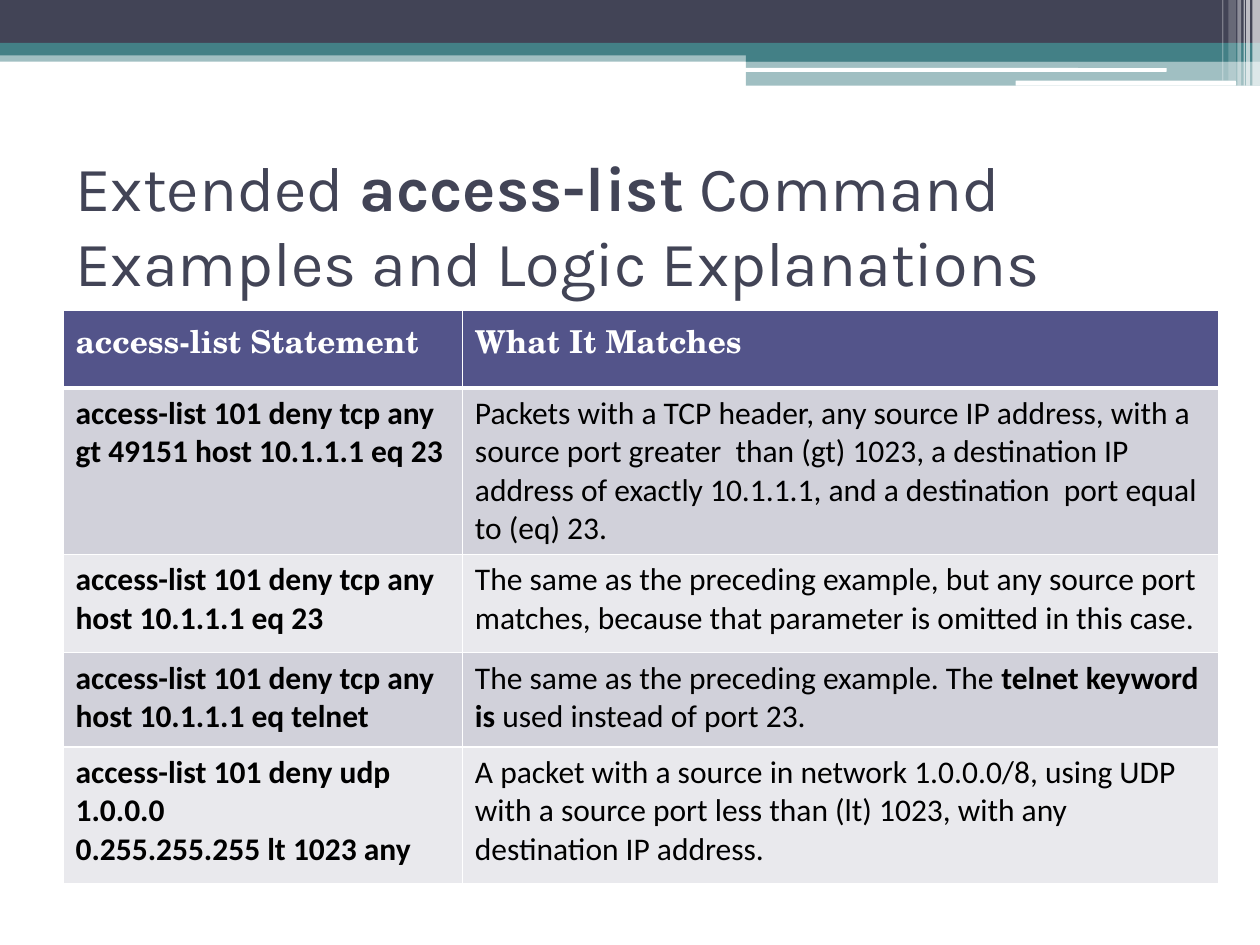
from dataclasses import dataclass

from lxml.etree import SubElement
from pptx import Presentation
from pptx.dml.color import RGBColor
from pptx.enum.shapes import MSO_SHAPE
from pptx.enum.text import MSO_ANCHOR, MSO_AUTO_SIZE, PP_ALIGN
from pptx.oxml.ns import qn
from pptx.util import Inches, Pt

SLATE = RGBColor(0x42, 0x44, 0x56)
TEAL = RGBColor(0x43, 0x80, 0x86)
INDIGO = RGBColor(0x53, 0x54, 0x8A)
BAND_DARK = RGBColor(0xD1, 0xD1, 0xDA)
BAND_LIGHT = RGBColor(0xE9, 0xE9, 0xED)
WHITE = RGBColor(0xFF, 0xFF, 0xFF)
BLACK = RGBColor(0, 0, 0)


@dataclass
class Bar:
    left: float
    top: float
    width: float
    height: float
    color: RGBColor
    opacity: int = 100
    rounded: bool = False


@dataclass
class Example:
    statement: list[str]
    meaning: list[str]  # ordinary and bold pieces alternate
    height: float


BANNER = [
    Bar(0, 0.4, 10, 0.09, TEAL, 50),
    Bar(0, 0, 10, 0.34, SLATE),
    Bar(0, 0.34, 10, 0.1, TEAL),
    Bar(5.92, 0.39, 4.08, 0.1, TEAL),
    Bar(5.92, 0.48, 4.08, 0.2, TEAL, 50),
    Bar(5.91, 0.54, 3.35, 0.03, WHITE, rounded=True),
    Bar(8.06, 0.64, 1.75, 0.04, WHITE, rounded=True),
    # Fading stripes at the right edge
    Bar(9.94, 0, 0.06, 0.68, WHITE, 65),
    Bar(9.89, 0, 0.03, 0.68, WHITE, 65),
    Bar(9.87, 0, 0.01, 0.68, WHITE, 60),
    Bar(9.82, 0, 0.03, 0.68, WHITE, 40),
    Bar(9.75, 0, 0.06, 0.64, WHITE, 20),
    Bar(9.7, 0, 0.01, 0.64, WHITE, 30),
]

HEADINGS = ["access-list Statement", "What It Matches"]
COLUMN_WIDTHS = [3.17, 6]
HEADER_HEIGHT = 0.62
EXAMPLES = [
    Example(
        ["access-list 101 deny tcp any gt 49151 host 10.1.1.1 eq 23"],
        ["Packets with a TCP header, any source IP address, with a source port "
         "greater  than (gt) 1023, a destination IP address of exactly 10.1.1.1, "
         "and a destination  port equal to (eq) 23."],
        1.08,
    ),
    Example(
        ["access-list 101 deny tcp any host 10.1.1.1 eq 23"],
        ["The same as the preceding example, but any source port matches, "
         "because that parameter is omitted in this case."],
        0.78,
    ),
    Example(
        ["access-list 101 deny tcp any", "host 10.1.1.1 eq telnet"],
        ["The same as the preceding example. The ", "telnet keyword is ",
         "used instead of port 23."],
        0.75,
    ),
    Example(
        ["access-list 101 deny udp 1.0.0.0", "0.255.255.255 lt 1023 any"],
        ["A packet with a source in network 1.0.0.0/8, using UDP with a source "
         "port less than (lt) 1023, with any destination IP address."],
        1.08,
    ),
]


def add_text(paragraph, text: str, *, font: str = "Calibri", size: float = 18,
             color: RGBColor = BLACK, bold: bool = False) -> None:
    run = paragraph.add_run()
    run.text = text
    run.font.name = font
    run.font.size = Pt(size)
    run.font.color.rgb = color
    run.font.bold = bold


def add_alternating(paragraph, pieces: list[str], **style) -> None:
    for index, piece in enumerate(pieces):
        add_text(paragraph, piece, bold=index % 2 == 1, **style)


def draw_bar(slide, bar: Bar) -> None:
    preset = MSO_SHAPE.ROUNDED_RECTANGLE if bar.rounded else MSO_SHAPE.RECTANGLE
    shape = slide.shapes.add_shape(preset, Inches(bar.left), Inches(bar.top),
                                   Inches(bar.width), Inches(bar.height))
    shape.shadow.inherit = False
    shape.line.fill.background()
    shape.fill.solid()
    shape.fill.fore_color.rgb = bar.color
    if bar.opacity < 100:
        color = shape.fill._xPr.find(qn("a:solidFill"))[0]
        SubElement(color, qn("a:alpha")).set("val", str(bar.opacity * 1000))


def style_cell(cell, fill: RGBColor, bottom_width: float = 1) -> None:
    properties = cell._tc.get_or_add_tcPr()
    widths = {"a:lnL": 1, "a:lnR": 1, "a:lnT": 1, "a:lnB": bottom_width}
    for tag, width in widths.items():
        border = SubElement(properties, qn(tag), w=str(Pt(width)))
        solid = SubElement(border, qn("a:solidFill"))
        SubElement(solid, qn("a:srgbClr"), val=str(WHITE))
    cell.fill.solid()
    cell.fill.fore_color.rgb = fill


def draw_title(slide) -> None:
    title = slide.shapes.title
    title.left, title.top = Inches(0.5), Inches(1.19)
    title.width, title.height = Inches(9), Inches(1.17)
    frame = title.text_frame
    frame.word_wrap = True
    frame.auto_size = MSO_AUTO_SIZE.NONE
    frame.vertical_anchor = MSO_ANCHOR.MIDDLE
    paragraph = frame.paragraphs[0]
    paragraph.alignment = PP_ALIGN.LEFT
    add_alternating(
        paragraph,
        ["Extended ", "access-list", " Command Examples and Logic Explanations"],
        font="Karla", size=36, color=SLATE)


def draw_examples(slide) -> None:
    heights = [HEADER_HEIGHT] + [example.height for example in EXAMPLES]
    table = slide.shapes.add_table(
        len(heights), len(COLUMN_WIDTHS), Inches(0.5), Inches(2.46),
        Inches(sum(COLUMN_WIDTHS)), Inches(sum(heights))).table
    for column, width in zip(table.columns, COLUMN_WIDTHS):
        column.width = Inches(width)
    for row, height in zip(table.rows, heights):
        row.height = Inches(height)

    # Header row
    for column, heading in enumerate(HEADINGS):
        cell = table.cell(0, column)
        style_cell(cell, INDIGO, bottom_width=3)
        add_text(cell.text_frame.paragraphs[0], heading,
                 font="TeX Gyre Schola", color=WHITE, bold=True)

    # Example rows in alternating bands
    for row, example in enumerate(EXAMPLES, start=1):
        statement, meaning = table.cell(row, 0), table.cell(row, 1)
        for cell in (statement, meaning):
            style_cell(cell, BAND_DARK if row % 2 else BAND_LIGHT,)
        for index, line in enumerate(example.statement):
            frame = statement.text_frame
            paragraph = frame.add_paragraph() if index else frame.paragraphs[0]
            add_text(paragraph, line, bold=True)
        add_alternating(meaning.text_frame.paragraphs[0], example.meaning)


def main() -> None:
    presentation = Presentation()
    presentation.slide_width = Inches(10)
    presentation.slide_height = Inches(7.5)
    slide = presentation.slides.add_slide(presentation.slide_layouts[5])
    for bar in BANNER:
        draw_bar(slide, bar)
    draw_title(slide)
    draw_examples(slide)
    presentation.save("out.pptx")


if __name__ == "__main__":
    main()
